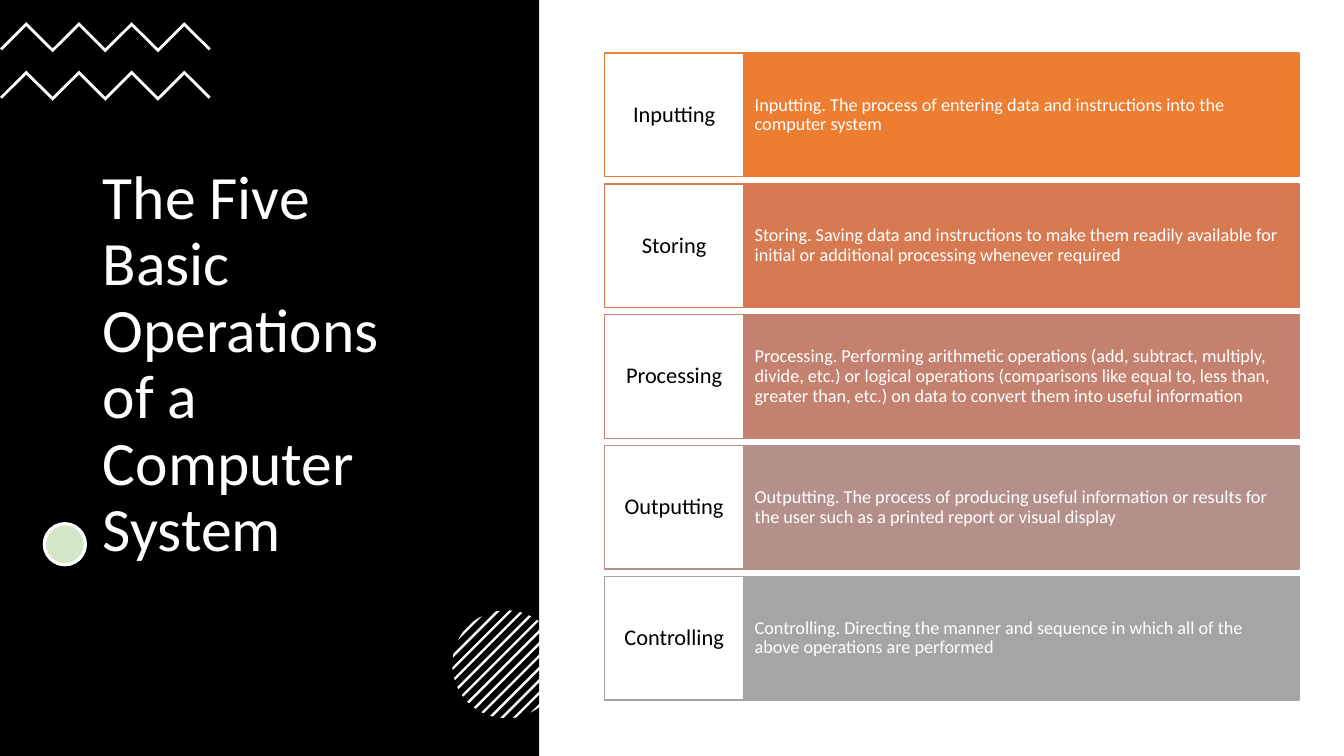
from math import acos, cos, pi, sin

from lxml import etree
from pptx import Presentation
from pptx.dml.color import RGBColor
from pptx.enum.shapes import MSO_SHAPE
from pptx.enum.text import MSO_ANCHOR, PP_ALIGN
from pptx.oxml.ns import qn
from pptx.util import Cm, Pt

RECTANGLE, OVAL = MSO_SHAPE.RECTANGLE, MSO_SHAPE.OVAL
MIDDLE = MSO_ANCHOR.MIDDLE
LEFT, CENTER = PP_ALIGN.LEFT, PP_ALIGN.CENTER
FONT = "Calibri"
BLACK, WHITE, GREEN = "000000", "FFFFFF", "70AD47"

TITLE = "The Five Basic Operations of a Computer System"
OPERATIONS = [
    ("Inputting", "ED7D31",
     "The process of entering data and instructions into the computer system"),
    ("Storing", "D87A51",
     "Saving data and instructions to make them readily available for initial "
     "or additional processing whenever required"),
    ("Processing", "C48170",
     "Performing arithmetic operations (add, subtract, multiply, divide, etc.) "
     "or logical operations (comparisons like equal to, less than, greater "
     "than, etc.) on data to convert them into useful information"),
    ("Outputting", "B4908B",
     "The process of producing useful information or results for the user "
     "such as a printed report or visual display"),
    ("Controlling", "A5A5A5",
     "Directing the manner and sequence in which all of the above operations "
     "are performed"),
]


def rgb(color):
    return RGBColor.from_string(color)


def paint(shape, fill, line=None, width=1, alpha=None):
    shape.shadow.inherit = False
    shape.fill.solid()
    shape.fill.fore_color.rgb = rgb(fill)
    if alpha is not None:
        color = shape.fill._xPr.find(qn("a:solidFill"))[0]
        etree.SubElement(color, qn("a:alpha"), val=str(alpha * 1000))
    if line:
        shape.line.color.rgb = rgb(line)
        shape.line.width = Pt(width)
    else:
        shape.line.fill.background()


def add_block(slide, kind, box, fill, **style):
    block = slide.shapes.add_shape(kind, *map(Cm, box))
    paint(block, fill, **style)
    return block


def add_outline(slide, points, fill):
    first, *others = [(Cm(x), Cm(y)) for x, y in points]
    builder = slide.shapes.build_freeform(*first)
    builder.add_line_segments(others, close=True)
    paint(builder.convert_to_shape(), fill)


def write(shape, text, size, color, align=LEFT, inset=(0.25, 0.13)):
    frame = shape.text_frame
    frame.word_wrap = True
    frame.vertical_anchor = MIDDLE
    frame.margin_left = frame.margin_right = Cm(inset[0])
    frame.margin_top = frame.margin_bottom = Cm(inset[1])
    paragraph = frame.paragraphs[0]
    paragraph.text = text
    paragraph.alignment = align
    paragraph.line_spacing = 0.9
    paragraph.font.name = FONT
    paragraph.font.size = Pt(size)
    paragraph.font.color.rgb = rgb(color)


def add_zigzag(slide, left, top, width, height, peaks=4, thickness=0.1):
    pitch = width / (2 * peaks)
    depth = height - thickness
    upper = [(left + i * pitch, top + (0 if i % 2 else depth))
             for i in range(2 * peaks + 1)]
    lower = [(x, y + thickness) for x, y in upper]
    # Square off the two ends of the band
    lower[0] = (left + thickness / 2, top + depth + thickness / 2)
    lower[-1] = (left + width - thickness / 2, top + depth + thickness / 2)
    add_outline(slide, upper + lower[::-1], WHITE)


def add_striped_disc(slide, left, top, size, stripes=13, pitch=0.22, thickness=0.06):
    radius = size / 2

    def rim(angle):
        return (left + radius + radius * cos(angle),
                top + radius + radius * sin(angle))

    for i in range(stripes):
        middle = (i - stripes // 2) * pitch
        near = acos((middle - thickness / 2) / radius)
        far = acos((middle + thickness / 2) / radius)
        # Each stripe is bounded by two chords and two short arcs of the rim
        arc = [near + (far - near) * step / 4 for step in range(5)]
        points = [rim(pi / 4 + a) for a in arc]
        points += [rim(pi / 4 - a) for a in reversed(arc)]
        add_outline(slide, points, WHITE)


def add_title_panel(slide, left, top, width, height):
    add_block(slide, RECTANGLE, (left, top, width, height), BLACK)
    title_box = (left + 2.34, top + 3.33, 8.89, 11.76)
    write(slide.shapes.add_textbox(*map(Cm, title_box)), TITLE, 44, WHITE)

    # Ornaments
    for zigzag_top in (0.56, 1.78):
        add_zigzag(slide, left, top + zigzag_top, 5.31, 0.76)
    dot = (left + 1.12, top + 13.2, 1.03, 1.03)
    add_block(slide, OVAL, dot, WHITE, line=WHITE, width=2.25)
    add_block(slide, OVAL, dot, GREEN, line=WHITE, width=2.25, alpha=30)
    add_striped_disc(slide, left + width - 2.19, top + 15.38, 2.72)


def add_operations(slide, left, top, width, height, gap=0.18):
    label_width = width / 5
    pitch = (height + gap) / len(OPERATIONS)
    for i, (name, color, description) in enumerate(OPERATIONS):
        row_top, row_height = top + i * pitch, pitch - gap
        bar = add_block(
            slide, RECTANGLE,
            (left + label_width, row_top, width - label_width, row_height),
            color, line=color)
        write(bar, f"{name}. {description}", 13, WHITE, inset=(0.28, 0.79))
        label = add_block(
            slide, RECTANGLE, (left, row_top, label_width, row_height),
            WHITE, line=color)
        write(label, name, 16, BLACK, align=CENTER, inset=(0.18, 0.3))


def main():
    deck = Presentation()
    deck.slide_width, deck.slide_height = Cm(33.87), Cm(19.05)
    slide = deck.slides.add_slide(deck.slide_layouts[6])
    add_title_panel(slide, 0, 0, 13.59, 19.05)
    add_operations(slide, 15.24, 1.34, 17.5, 16.3)
    deck.save("out.pptx")


if __name__ == "__main__":
    main()
